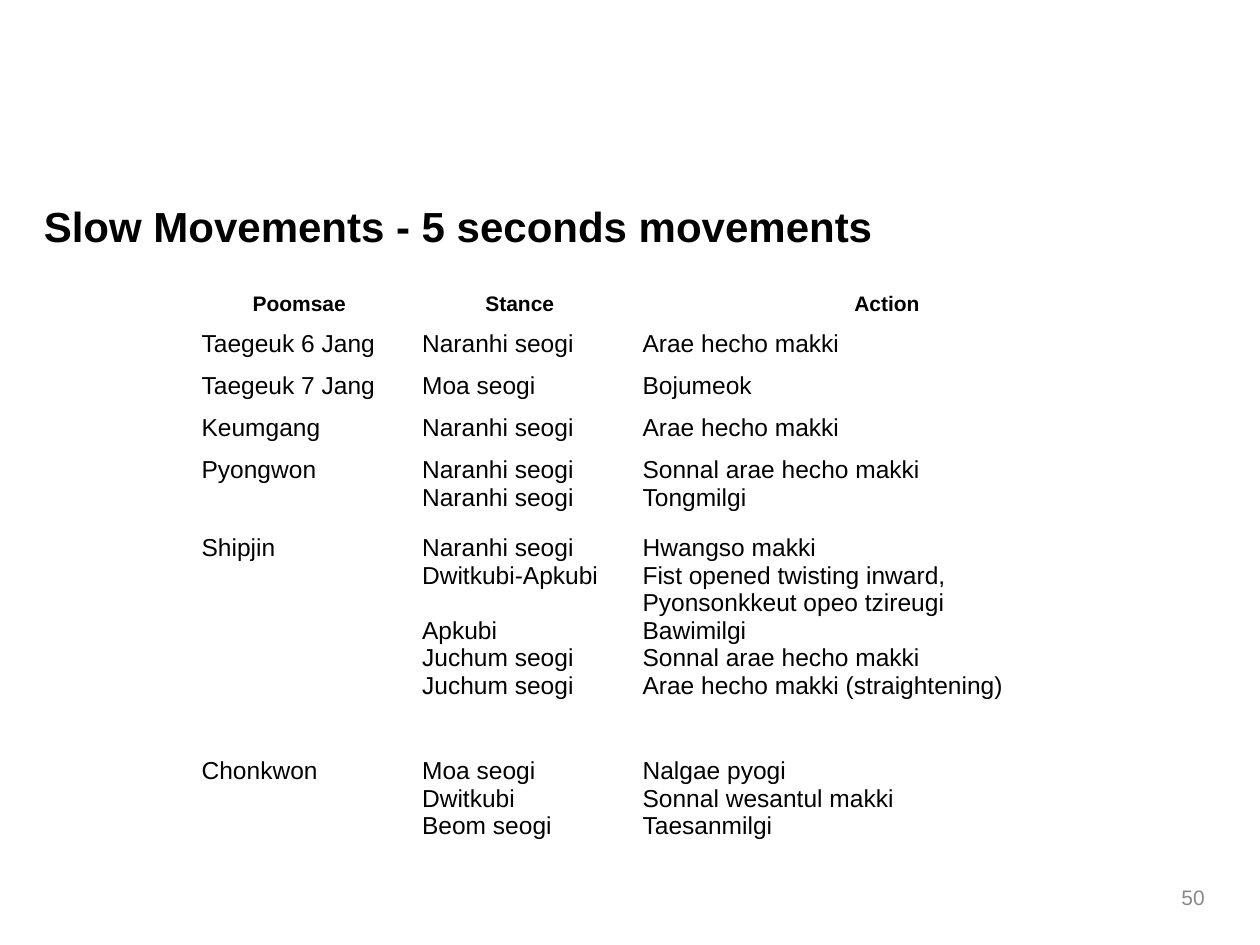
from dataclasses import dataclass

from pptx import Presentation
from pptx import util as u
from pptx.dml import color
from pptx.enum import text

SLIDE_WIDTH, SLIDE_HEIGHT = 10, 7.5
FONT = "Arial"
COLORS = {"ink": "000000", "muted": "898989"}
LINE_PITCH = 15.7  # height of one 14 pt line, in points

TITLE_STYLE = {"size": u.Pt(24), "bold": True}
HEADER_STYLE = {"size": u.Pt(12), "bold": True}
BODY_STYLE = {"size": u.Pt(14), "bold": False}
NUMBER_STYLE = {"size": u.Pt(12), "bold": False}


@dataclass
class Label:
    content: str
    left: float
    top: float
    width: float
    height: float
    style: dict
    ink: str = "ink"
    align: text.PP_ALIGN = text.PP_ALIGN.LEFT
    inset: float = 0.1


@dataclass
class Row:
    poomsae: str
    stances: list[str]
    actions: list[str]
    height: float = 0.33


LABELS = [
    Label("Slow Movements - 5 seconds movements", 0.25, 1.33, 9.5, 0.92, TITLE_STYLE),
    Label("50", 7.33, 6.92, 2.33, 0.4, NUMBER_STYLE, "muted", text.PP_ALIGN.RIGHT),
]

# An empty stance means the action above it runs on to a second line
COLUMN_WIDTHS = [1.75, 1.75, 4.08]
HEADER = Row("Poomsae", ["Stance"], ["Action"], 0.3)
ROWS = [
    Row("Taegeuk 6 Jang", ["Naranhi seogi"], ["Arae hecho makki"]),
    Row("Taegeuk 7 Jang", ["Moa seogi"], ["Bojumeok"]),
    Row("Keumgang", ["Naranhi seogi"], ["Arae hecho makki"]),
    Row("Pyongwon", ["Naranhi seogi"] * 2, ["Sonnal arae hecho makki", "Tongmilgi"], 0.62),
    Row("Shipjin",
        ["Naranhi seogi", "Dwitkubi-Apkubi", "", "Apkubi", "Juchum seogi", "Juchum seogi"],
        ["Hwangso makki", "Fist opened twisting inward,", "Pyonsonkkeut opeo tzireugi",
         "Bawimilgi", "Sonnal arae hecho makki", "Arae hecho makki (straightening)"], 1.77),
    Row("Chonkwon", ["Moa seogi", "Dwitkubi", "Beom seogi"],
        ["Nalgae pyogi", "Sonnal wesantul makki", "Taesanmilgi"], 0.91),
]


def write_lines(frame, lines: list[str], style: dict, align: text.PP_ALIGN,
                ink: str = "ink") -> None:
    """Write one paragraph per line; an empty line becomes space before the next."""
    gap = 0
    for index, line in enumerate(lines):
        if not line:
            gap += LINE_PITCH
            continue
        paragraph = frame.paragraphs[0] if index == 0 else frame.add_paragraph()
        paragraph.alignment = align
        if gap:
            paragraph.space_before = u.Pt(gap)
            gap = 0
        run = paragraph.add_run()
        run.text = line
        for name, value in {"name": FONT, **style}.items():
            setattr(run.font, name, value)
        run.font.color.rgb = color.RGBColor.from_string(COLORS[ink])


def add_label(slide, label: Label) -> None:
    box = slide.shapes.add_textbox(
        *map(u.Inches, (label.left, label.top, label.width, label.height)))
    frame = box.text_frame
    margin = u.Inches(label.inset)
    settings = {"word_wrap": True, "vertical_anchor": text.MSO_ANCHOR.MIDDLE,
                "margin_left": margin, "margin_right": margin}
    for name, value in settings.items():
        setattr(frame, name, value)
    write_lines(frame, [label.content], label.style, label.align, label.ink)


def add_movement_table(slide, left: float, top: float) -> None:
    rows = [HEADER, *ROWS]
    height = sum(row.height for row in rows)
    table = slide.shapes.add_table(
        len(rows), len(COLUMN_WIDTHS),
        *map(u.Inches, (left, top, sum(COLUMN_WIDTHS), height))).table
    table.first_row = table.horz_banding = False
    for column, width in zip(table.columns, COLUMN_WIDTHS):
        column.width = u.Inches(width)
    for row, table_row in zip(rows, table.rows):
        table_row.height = u.Inches(row.height)
        is_header = row is HEADER
        style = HEADER_STYLE if is_header else BODY_STYLE
        align = text.PP_ALIGN.CENTER if is_header else text.PP_ALIGN.LEFT
        for cell, lines in zip(table_row.cells, ([row.poomsae], row.stances, row.actions)):
            cell.fill.background()
            write_lines(cell.text_frame, lines, style, align)


def main() -> None:
    presentation = Presentation()
    presentation.slide_width = u.Inches(SLIDE_WIDTH)
    presentation.slide_height = u.Inches(SLIDE_HEIGHT)
    slide = presentation.slides.add_slide(presentation.slide_layouts[6])

    # Title and slide number
    for label in LABELS:
        add_label(slide, label)

    # Slow movements by poomsae
    add_movement_table(slide, 1.5, 2.27)

    presentation.save("out.pptx")


if __name__ == "__main__":
    main()
